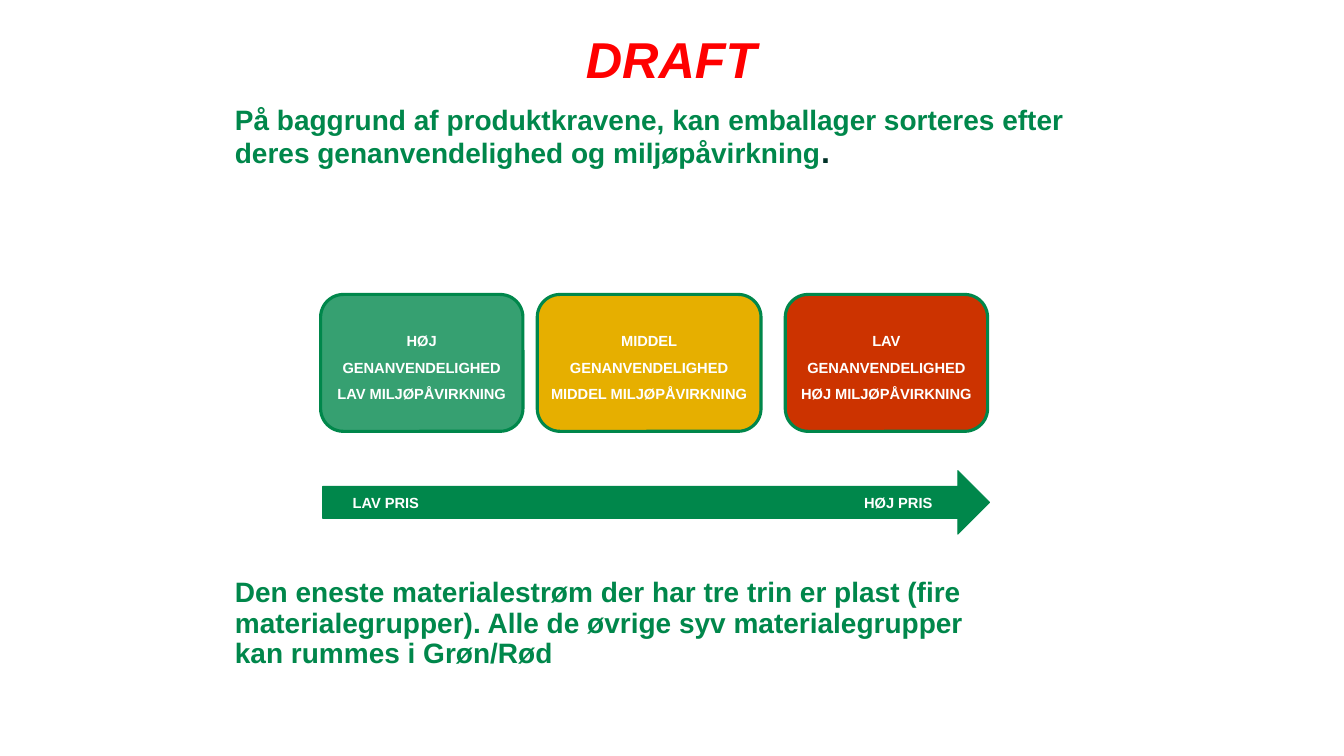
"""Build a slide that sorts packaging by recyclability, impact and price."""
from pptx import Presentation, util as u
from pptx.dml.color import RGBColor
from pptx.enum import shapes, text
from pptx.oxml.ns import qn
from lxml import etree

GREEN = RGBColor(0x00, 0x87, 0x4B)
MINT = RGBColor(0x36, 0xA0, 0x71)
AMBER = RGBColor(0xE6, 0xAF, 0x00)
RUST = RGBColor(0xCC, 0x33, 0x00)
RED = RGBColor(0xFF, 0x00, 0x00)
DARK = RGBColor(0x00, 0x31, 0x27)
WHITE = RGBColor(0xFF, 0xFF, 0xFF)

DRAFT = "DRAFT"
TITLE = ("På baggrund af produktkravene, kan emballager sorteres efter "
         "deres genanvendelighed og miljøpåvirkning")
NOTE = ("Den eneste materialestrøm der har tre trin er plast (fire materialegrupper). "
        "Alle de øvrige syv materialegrupper kan rummes i Grøn/Rød")
PRICES = ("LAV PRIS", "HØJ PRIS")
GRADES = [
    (8.08, 5.1, MINT, ["HØJ GENANVENDELIGHED", "LAV MILJØPÅVIRKNING"]),
    (13.54, 5.64, AMBER, ["MIDDEL", "GENANVENDELIGHED", "MIDDEL MILJØPÅVIRKNING"]),
    (19.79, 5.1, RUST, ["LAV GENANVENDELIGHED", "HØJ MILJØPÅVIRKNING"]),
]
TOP, HIGH = 7.42, 3.45
ARROW = (8.13, 11.86, 16.81, 1.6)
PAD, START, TAB = 0.16, 0.76, 12.89


def style(para, size, color, space=None, align=text.PP_ALIGN.LEFT):
    para.alignment = align
    para.line_spacing = space
    font = para.font
    font.name, font.size, font.bold = "Arial", u.Pt(size), True
    font.color.rgb = color


def pad(frame, gap):
    frame.word_wrap = True
    frame.margin_left = frame.margin_right = u.Cm(gap)
    frame.margin_top = frame.margin_bottom = u.Cm(gap)


def add_text(slide, place, words, size, color, space, align=text.PP_ALIGN.LEFT):
    frame = slide.shapes.add_textbox(*map(u.Cm, place)).text_frame
    pad(frame, 0)
    para = frame.paragraphs[0]
    para.text = words
    style(para, size, color, space, align)
    return para


def add_block(slide, kind, place, fill, width):
    block = slide.shapes.add_shape(kind, *map(u.Cm, place))
    block.shadow.inherit = False
    block.fill.solid()
    block.fill.fore_color.rgb = fill
    block.line.color.rgb = GREEN
    block.line.width = u.Pt(width)
    frame = block.text_frame
    pad(frame, PAD)
    frame.vertical_anchor = text.MSO_ANCHOR.MIDDLE
    return frame


def add_arrow(slide):
    frame = add_block(slide, shapes.MSO_SHAPE.RIGHT_ARROW, ARROW, GREEN, 0.75)
    frame.margin_left = u.Cm(START)
    para = frame.paragraphs[0]
    para.text = "\t".join(PRICES)
    tabs = etree.SubElement(para._p.get_or_add_pPr(), qn("a:tabLst"))
    etree.SubElement(tabs, qn("a:tab"), pos=str(u.Cm(TAB)), algn="l")
    style(para, 10.5, WHITE)


def add_grade(slide, left, width, fill, lines):
    place = (left, TOP, width, HIGH)
    frame = add_block(slide, shapes.MSO_SHAPE.ROUNDED_RECTANGLE, place, fill, 2.25)
    frame.text = "\n".join(lines)
    for para in frame.paragraphs:
        style(para, 10.5, WHITE, 1.5, text.PP_ALIGN.CENTER)


def main():
    deck = Presentation()
    deck.slide_width, deck.slide_height = u.Cm(33.87), u.Cm(19.05)
    slide = deck.slides.add_slide(deck.slide_layouts[6])
    add_arrow(slide)
    for grade in GRADES:
        add_grade(slide, *grade)
    title = add_text(slide, (5.92, 2.67, 22.68, 1.3), TITLE, 20, GREEN, 0.9)
    stop = title.add_run()
    stop.text = "."
    stop.font.size = u.Pt(23)
    stop.font.color.rgb = DARK
    add_text(slide, (5.92, 14.58, 19.61, 2.31), NOTE, 20, GREEN, 0.9)
    draft = add_text(slide, (6.02, 0.86, 21.79, 1.3), DRAFT, 36, RED, 0.91,
                     text.PP_ALIGN.CENTER)
    draft.font.italic = True
    deck.save("out.pptx")


if __name__ == "__main__":
    main()
